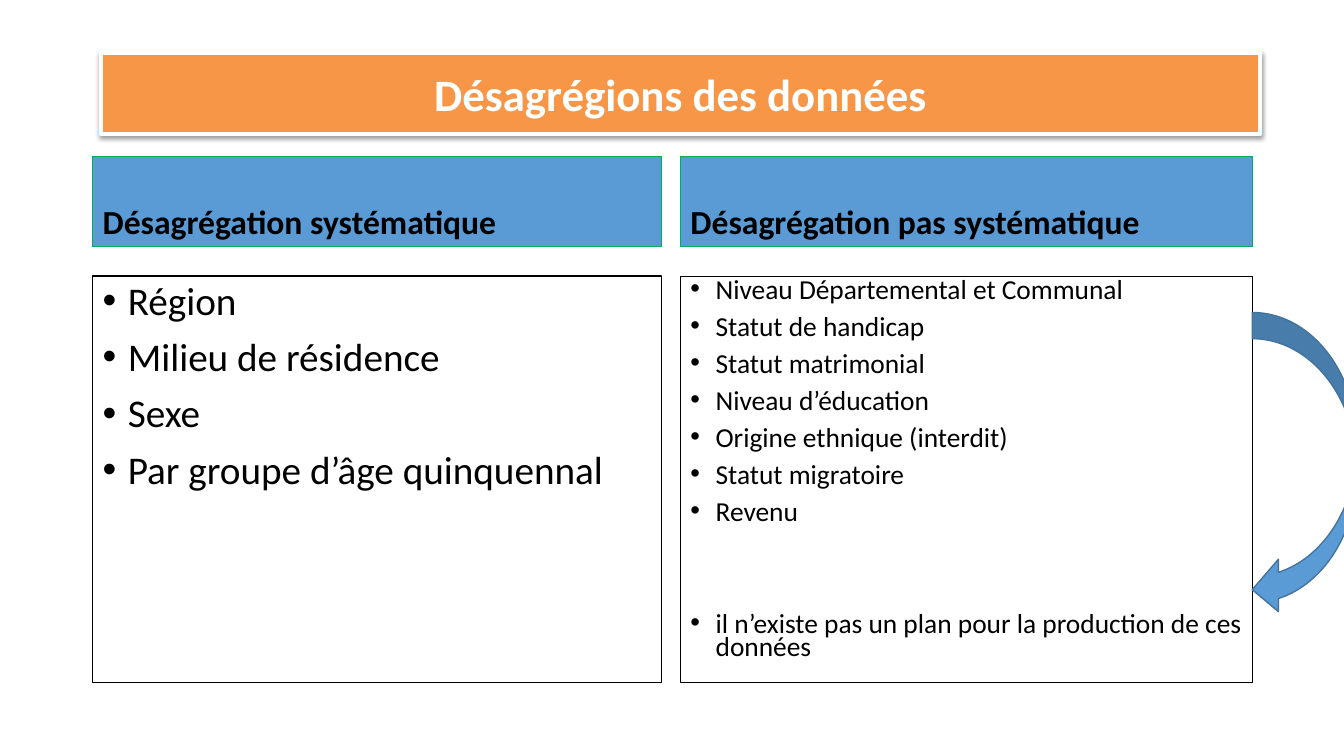
from dataclasses import dataclass

from lxml.etree import SubElement
from pptx import Presentation
from pptx.dml.color import RGBColor
from pptx.enum.shapes import MSO_SHAPE
from pptx.enum.text import MSO_ANCHOR, PP_ALIGN
from pptx.oxml.ns import qn
from pptx.util import Inches, Pt


@dataclass(frozen=True)
class Theme:
    """Colours, font and type sizes of the slide."""
    font: str = "Calibri"
    white: str = "FFFFFF"
    black: str = "000000"
    orange: str = "F79646"
    blue: str = "5B9BD5"
    green: str = "00B050"
    dark_blue: str = "43739E"
    title_size: float = 32
    heading_size: float = 24
    large_size: float = 28
    small_size: float = 19.6
    paragraph_gap: float = 10


THEME = Theme()
SYSTEMATIC = ["Région", "Milieu de résidence", "Sexe", "Par groupe d’âge quinquennal"]
NOT_SYSTEMATIC = [
    "Niveau Départemental et Communal",
    "Statut de handicap",
    "Statut matrimonial",
    "Niveau d’éducation",
    "Origine ethnique (interdit)",
    "Statut migratoire",
    "Revenu",
]
NOTE = "il n’existe pas un plan pour la production de ces données"


def add_box(page, kind, box, fill, line, width):
    """Add a filled, outlined shape without shadow at (left, top, width, height)."""
    shape = page.shapes.add_shape(kind, *(Inches(length) for length in box))
    shape.shadow.inherit = False
    shape.fill.solid()
    shape.fill.fore_color.rgb = RGBColor.from_string(fill)
    shape.line.color.rgb = RGBColor.from_string(line)
    shape.line.width = Pt(width)
    shape.text_frame.word_wrap = True
    return shape


def add_span(para, text, size, color, bold=False):
    """Add one formatted run to a paragraph."""
    span = para.add_run()
    span.text = text
    span.font.name = THEME.font
    span.font.size = Pt(size)
    span.font.bold = bold
    span.font.color.rgb = RGBColor.from_string(color)


def add_soft_shadow(shape):
    """Give a shape a soft shadow falling straight down."""
    effects = shape.element.spPr.find(qn("a:effectLst"))
    shadow = SubElement(effects, qn("a:outerShdw"), blurRad=str(Pt(3.1)),
                        dist=str(Pt(1.6)), dir="5400000", rotWithShape="0")
    color = SubElement(shadow, qn("a:srgbClr"), val=THEME.black)
    SubElement(color, qn("a:alpha"), val="38000")


def add_title(page, box, text):
    """Add the orange title banner."""
    banner = add_box(page, MSO_SHAPE.RECTANGLE, box, THEME.orange, THEME.white, 3)
    add_soft_shadow(banner)
    banner.text_frame.vertical_anchor = MSO_ANCHOR.MIDDLE
    para = banner.text_frame.paragraphs[0]
    para.alignment = PP_ALIGN.CENTER
    add_span(para, text, THEME.title_size, THEME.white, bold=True)


def add_heading(page, box, text):
    """Add the blue heading of a column."""
    heading = add_box(page, MSO_SHAPE.RECTANGLE, box, THEME.blue, THEME.green, 0.75)
    heading.text_frame.vertical_anchor = MSO_ANCHOR.BOTTOM
    para = heading.text_frame.paragraphs[0]
    para.alignment = PP_ALIGN.LEFT
    para.line_spacing = 0.9
    add_span(para, text, THEME.heading_size, THEME.black, bold=True)


def add_bullet(para, text, size, spacing, gap):
    """Fill a paragraph as a bulleted line with a hanging indent."""
    para.alignment = PP_ALIGN.LEFT
    para.line_spacing = spacing
    para.space_before = Pt(gap)
    properties = para._p.get_or_add_pPr()
    properties.set("marL", str(Inches(0.25)))
    properties.set("indent", str(-Inches(0.25)))
    SubElement(properties, qn("a:buFont"), typeface="Arial")
    SubElement(properties, qn("a:buChar"), char="•")
    add_span(para, text, size, THEME.black)


def add_column(page, box, heading, items, size, spacing, line, note=None):
    """Add a heading and, below it, a framed list with an optional closing note."""
    left, top, width, height = box
    heading_height, list_offset = 0.9, 1.19
    add_heading(page, (left, top, width, heading_height), heading)
    list_box = (left, top + list_offset, width, height - list_offset)
    panel = add_box(page, MSO_SHAPE.RECTANGLE, list_box, THEME.white, THEME.black, line)
    frame = panel.text_frame
    frame.vertical_anchor = MSO_ANCHOR.TOP
    for index, item in enumerate(items):
        para = frame.add_paragraph() if index else frame.paragraphs[0]
        add_bullet(para, item, size, spacing, THEME.paragraph_gap)
    if note:
        line_height = size * 1.22 * spacing
        gap = 3 * THEME.paragraph_gap + 2 * line_height
        add_bullet(frame.add_paragraph(), note, size, spacing, gap)


def add_return_arrow(page, box):
    """Add the curved arrow that runs from the list down to its note."""
    add_box(page, MSO_SHAPE.CURVED_LEFT_ARROW, box, THEME.blue, THEME.dark_blue, 1)


def main():
    """Build and save the slide."""
    deck = Presentation()
    deck.slide_width, deck.slide_height = Inches(13.33), Inches(7.5)
    page = deck.slides.add_slide(deck.slide_layouts[6])
    add_column(page, (0.92, 1.55, 5.64, 5.22), "Désagrégation systématique",
               SYSTEMATIC, THEME.large_size, 0.9, 1)
    add_column(page, (6.75, 1.55, 5.67, 5.22), "Désagrégation pas systématique",
               NOT_SYSTEMATIC, THEME.small_size, 0.7, 0.75, NOTE)
    add_title(page, (1, 0.52, 11.5, 0.81), "Désagrégions des données")
    add_return_arrow(page, (12.42, 3.1, 1.04, 3.01))
    deck.save("out.pptx")


if __name__ == "__main__":
    main()
